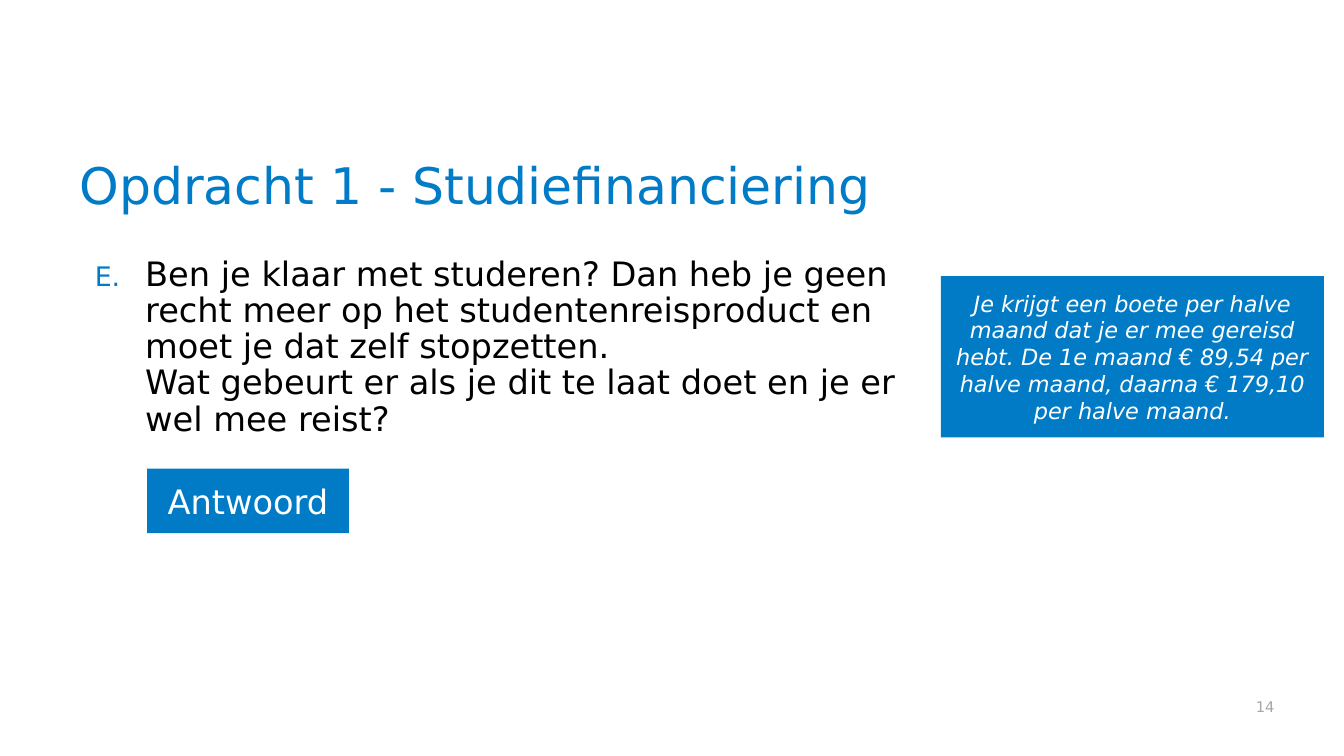
from dataclasses import dataclass

from lxml import etree
from pptx import Presentation
from pptx import util as u
from pptx.dml.color import RGBColor
from pptx.enum import shapes, text
from pptx.oxml.ns import qn


@dataclass(frozen=True)
class Theme:
    font: str = "DejaVu Sans"
    title_blue: str = "007BC7"
    box_blue: str = "017BC6"
    black: str = "000000"
    white: str = "FFFFFF"
    grey: str = "A6A6A6"
    title_size: float = 36
    body_size: float = 24
    answer_size: float = 16
    number_size: float = 10.5
    line_spacing: float = 0.9


THEME = Theme()
WIDTH, HEIGHT = 13.33, 7.5
MARGIN = 0.69
CONTENT_WIDTH = WIDTH - 2 * MARGIN


def place(shape, box):
    shape.left, shape.top, shape.width, shape.height = map(u.Inches, box)


def prepare_frame(shape, anchor):
    frame = shape.text_frame
    frame.word_wrap = True
    frame.auto_size = text.MSO_AUTO_SIZE.NONE
    frame.vertical_anchor = anchor
    return frame


def add_run(paragraph, words, size, color, italic=False):
    run = paragraph.add_run()
    run.text = words
    font = run.font
    font.name, font.size, font.italic = THEME.font, u.Pt(size), italic
    font.color.rgb = RGBColor.from_string(color)


def add_title(slide, box, words):
    title = slide.shapes.title
    place(title, box)
    paragraph = prepare_frame(title, text.MSO_ANCHOR.BOTTOM).paragraphs[0]
    paragraph.alignment = text.PP_ALIGN.LEFT
    paragraph.line_spacing = THEME.line_spacing
    add_run(paragraph, words, THEME.title_size, THEME.title_blue)


def set_letter_bullet(paragraph, start):
    properties = paragraph._p.get_or_add_pPr()
    properties.set("marL", str(u.Inches(0.65)))
    properties.set("indent", str(u.Inches(-0.5)))
    color = etree.SubElement(properties, qn("a:buClr"))
    etree.SubElement(color, qn("a:srgbClr"), val=THEME.box_blue)
    etree.SubElement(properties, qn("a:buSzPct"), val="80000")
    etree.SubElement(properties, qn("a:buFont"), typeface=THEME.font)
    etree.SubElement(properties, qn("a:buAutoNum"), type="alphaUcPeriod", startAt=str(start))


def add_question(slide, box, lines, start):
    body = slide.placeholders[1]
    place(body, box)
    paragraph = prepare_frame(body, text.MSO_ANCHOR.TOP).paragraphs[0]
    set_letter_bullet(paragraph, start)
    paragraph.line_spacing = THEME.line_spacing
    paragraph.space_before = u.Pt(0)
    for index, line in enumerate(lines):
        if index:
            paragraph.add_line_break()
        add_run(paragraph, line, THEME.body_size, THEME.black)


def add_blue_box(slide, box, words, size, italic=False):
    shape = slide.shapes.add_shape(shapes.MSO_SHAPE.RECTANGLE, *map(u.Inches, box))
    shape.shadow.inherit = False
    shape.fill.solid()
    shape.fill.fore_color.rgb = RGBColor.from_string(THEME.box_blue)
    shape.line.fill.background()
    paragraph = prepare_frame(shape, text.MSO_ANCHOR.MIDDLE).paragraphs[0]
    paragraph.alignment = text.PP_ALIGN.CENTER
    add_run(paragraph, words, size, THEME.white, italic)


def add_page_number(slide, box, number):
    frame = prepare_frame(slide.shapes.add_textbox(*map(u.Inches, box)), text.MSO_ANCHOR.BOTTOM)
    frame.margin_right = 0
    paragraph = frame.paragraphs[0]
    paragraph.alignment = text.PP_ALIGN.RIGHT
    add_run(paragraph, number, THEME.number_size, THEME.grey)


def build_question_slide(presentation):
    slide = presentation.slides.add_slide(presentation.slide_layouts[1])
    # Title and question
    add_title(slide, (MARGIN, 1.15, CONTENT_WIDTH, 1.04), "Opdracht 1 - Studiefinanciering")
    add_question(slide, (MARGIN, HEIGHT / 3, 0.7 * CONTENT_WIDTH, 4.3), [
        "Ben je klaar met studeren? Dan heb je geen recht meer op het "
        "studentenreisproduct en moet je dat zelf stopzetten.",
        "Wat gebeurt er als je dit te laat doet en je er wel mee reist?",
    ], start=5)
    # Answer button and answer
    add_blue_box(slide, (1.46, 4.65, 2, 0.64), "Antwoord", THEME.body_size)
    add_blue_box(
        slide, (0.7 * WIDTH, 2.74, 3.8, 1.6),
        "Je krijgt een boete per halve maand dat je er mee gereisd hebt. "
        "De 1e maand € 89,54 per halve maand, daarna € 179,10 per halve maand.",
        THEME.answer_size, italic=True)
    # Page number, flush with the right margin
    number_width = 5.47
    add_page_number(slide, (WIDTH - MARGIN - number_width, 6.8, number_width, 0.35), "14")


def main():
    presentation = Presentation()
    presentation.slide_width, presentation.slide_height = u.Inches(WIDTH), u.Inches(HEIGHT)
    build_question_slide(presentation)
    presentation.save("out.pptx")


if __name__ == "__main__":
    main()
